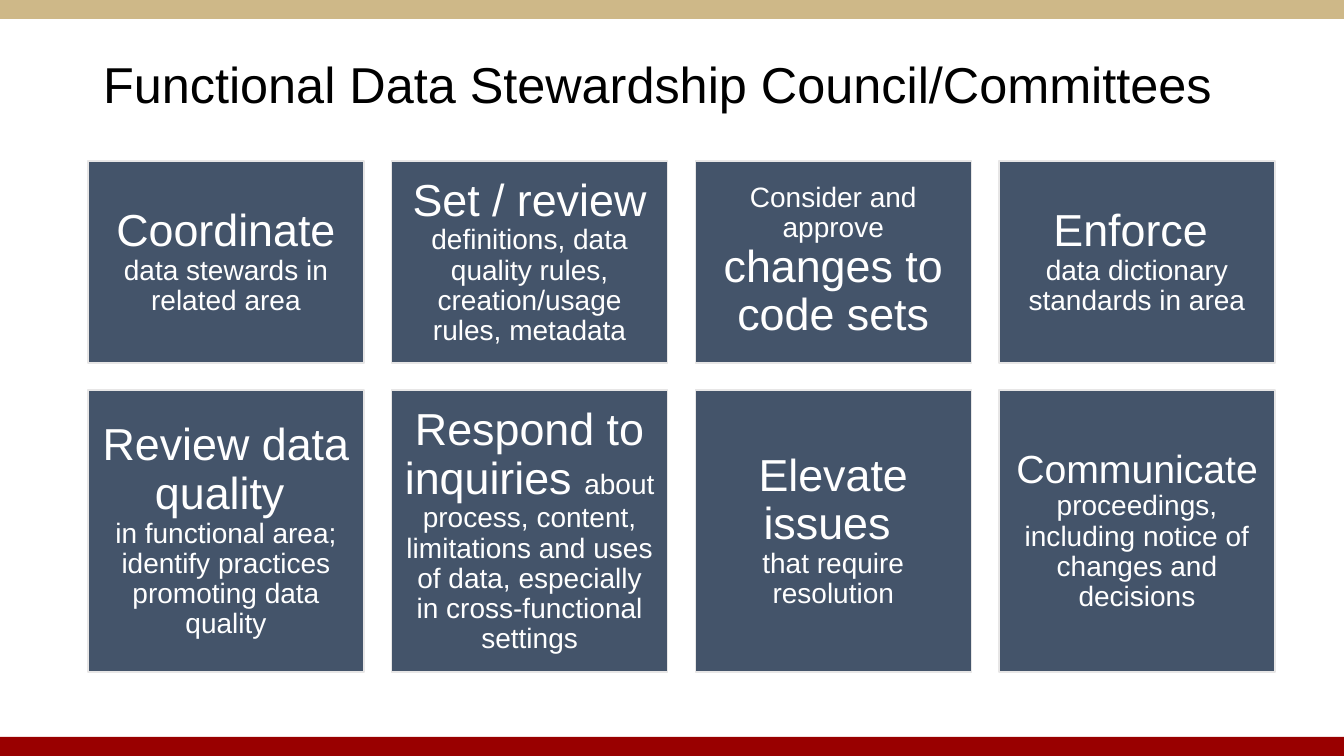
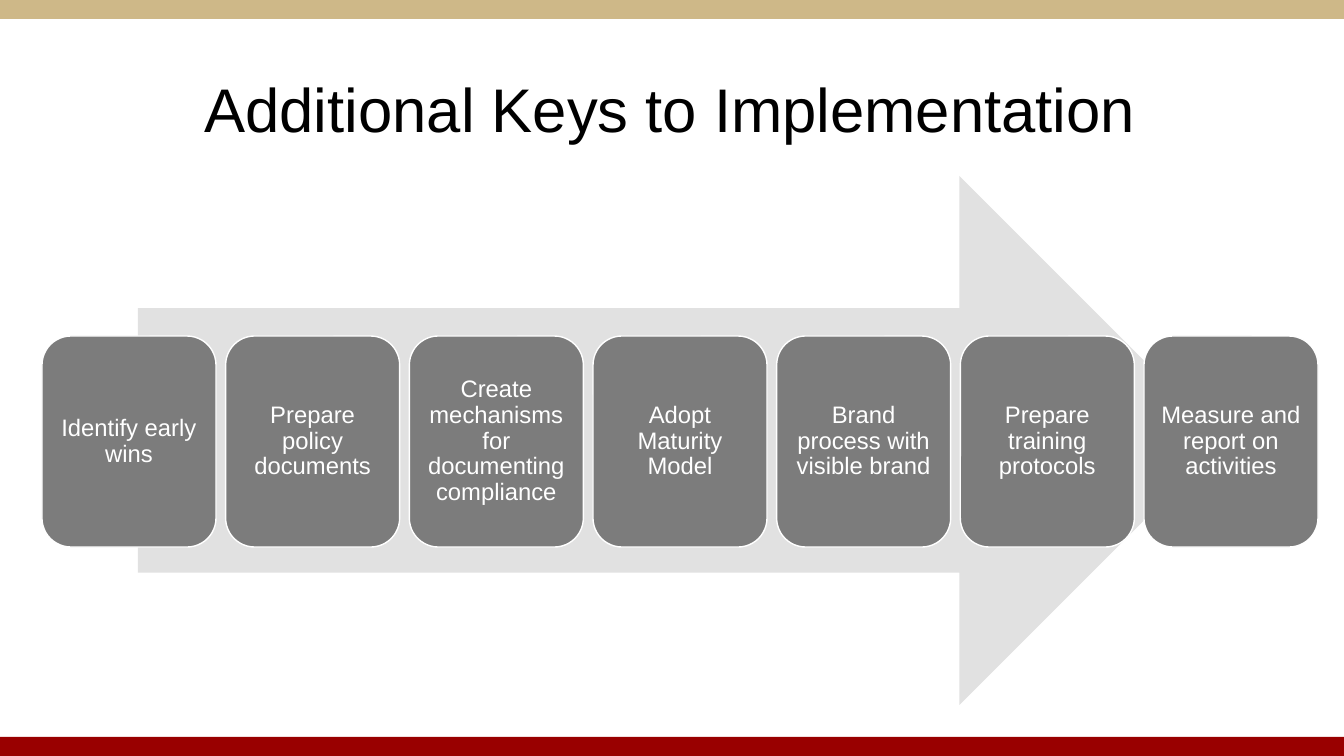
from dataclasses import dataclass

from pptx import Presentation
from pptx.dml.color import RGBColor as Rgb
from pptx.enum.shapes import MSO_SHAPE as Kind
from pptx.enum.text import MSO_ANCHOR as Anchor, PP_ALIGN as Align
from pptx.util import Emu, Pt


@dataclass(frozen=True)
class Theme:
    font: str = "Arial"
    ink: str = "000000"
    white: str = "FFFFFF"
    gold: str = "CEB888"
    red: str = "990000"
    navy: str = "44546A"
    edge: str = "E7E6E6"
    arrow: str = "E1E1E1"
    step: str = "7C7C7C"
    lead: int = 32
    body: int = 20
    small: int = 17
    lines: float = 0.9


THEME = Theme()
WIDE, HIGH, BAND = 1344, 756, 19

# Each tile is a list of (text, size); a line feed is a forced break.
DUTIES = [
    [
        [("Coordinate ", THEME.lead), ("data stewards in related area", THEME.body)],
        [("Set / review ", THEME.lead),
         ("definitions, data quality rules, creation/usage rules, metadata", THEME.body)],
        [("Consider and approve ", THEME.body), ("changes to code sets", THEME.lead)],
        [("Enforce \n", THEME.lead), ("data dictionary standards in area", THEME.body)],
    ],
    [
        [("Review data quality \n", THEME.lead),
         ("in functional area; identify practices promoting data quality", THEME.body)],
        [("Respond to inquiries ", THEME.lead),
         ("about process, content, limitations and uses of data, "
          "especially in cross-functional settings", THEME.body)],
        [("Elevate issues \n", THEME.lead), ("that require resolution", THEME.body)],
        [("Communicate ", 28),
         ("proceedings, including notice of changes and decisions", THEME.body)],
    ],
]
ROWS = [(161, 202), (390, 282)]  # top, height

KEYS = [
    "Identify early wins",
    "Prepare policy documents",
    "Create mechanisms for documenting compliance",
    "Adopt Maturity Model",
    "Brand process with visible brand",
    "Prepare training protocols",
    "Measure and report on activities",
]


def px(count):
    return Emu(round(count * 914400 / 100.8))


def spread(left, right, width, count):
    """Left edges of equal boxes that fill the span from left to right."""
    step = (right - left - width) / (count - 1)
    return [left + i * step for i in range(count)]


def style(para, size, color, align):
    para.alignment = align
    para.line_spacing = THEME.lines
    para.font.name = THEME.font
    para.font.size = Pt(size)
    para.font.color.rgb = Rgb.from_string(color)


def draw(slide, kind, box, fill, line=None):
    shape = slide.shapes.add_shape(kind, *map(px, box))
    shape.shadow.inherit = False
    shape.fill.solid()
    shape.fill.fore_color.rgb = Rgb.from_string(fill)
    if line:
        shape.line.color.rgb = Rgb.from_string(line)
        shape.line.width = Pt(1)
    else:
        shape.line.fill.background()
    return shape


def write(shape, parts, inset):
    """Fill a shape with one centred paragraph of (text, size) parts."""
    frame = shape.text_frame
    frame.word_wrap = True
    frame.vertical_anchor = Anchor.MIDDLE
    frame.margin_left = frame.margin_right = px(inset)
    frame.margin_top = frame.margin_bottom = px(inset)
    para = frame.paragraphs[0]
    style(para, parts[-1][1], THEME.white, Align.CENTER)
    for text, size in parts:
        run = para.add_run()
        run.text = text.rstrip("\n")
        if len(parts) > 1:
            run.font.size = Pt(size)
        if text.endswith("\n"):
            para.add_line_break()


def start(deck, title, box, size, align):
    slide = deck.slides.add_slide(deck.slide_layouts[5])
    draw(slide, Kind.RECTANGLE, (0, HIGH - BAND, WIDE, BAND), THEME.red)
    draw(slide, Kind.RECTANGLE, (0, 0, WIDE, BAND), THEME.gold)
    head = slide.shapes.title
    head.left, head.top, head.width, head.height = map(px, box)
    head.text_frame.text = title
    head.text_frame.vertical_anchor = Anchor.MIDDLE
    style(head.text_frame.paragraphs[0], size, THEME.ink, align)
    return slide


def add_duties(deck):
    slide = start(deck, "Functional Data Stewardship Council/Committees",
                  (93, 40, 1251, 94), 36, Align.LEFT)
    width = 276
    for (top, height), row in zip(ROWS, DUTIES):
        for left, parts in zip(spread(88, 1275, width, len(row)), row):
            tile = draw(slide, Kind.RECTANGLE, (left, top, width, height),
                        THEME.navy, THEME.edge)
            write(tile, parts, 13)


def add_keys(deck):
    slide = start(deck, "Additional Keys to Implementation",
                  (38, 40, 1265, 146), 44, Align.CENTER)
    draw(slide, Kind.RIGHT_ARROW, (138, 176, 1086, 529), THEME.arrow)
    width = 174
    for left, text in zip(spread(42, 1318, width, len(KEYS)), KEYS):
        step = draw(slide, Kind.ROUNDED_RECTANGLE, (left, 336, width, 211),
                    THEME.step, THEME.white)
        write(step, [(text, THEME.small)], 7)


def main():
    deck = Presentation()
    deck.slide_width, deck.slide_height = px(WIDE), px(HIGH)
    add_duties(deck)
    add_keys(deck)
    deck.save("out.pptx")


if __name__ == "__main__":
    main()
